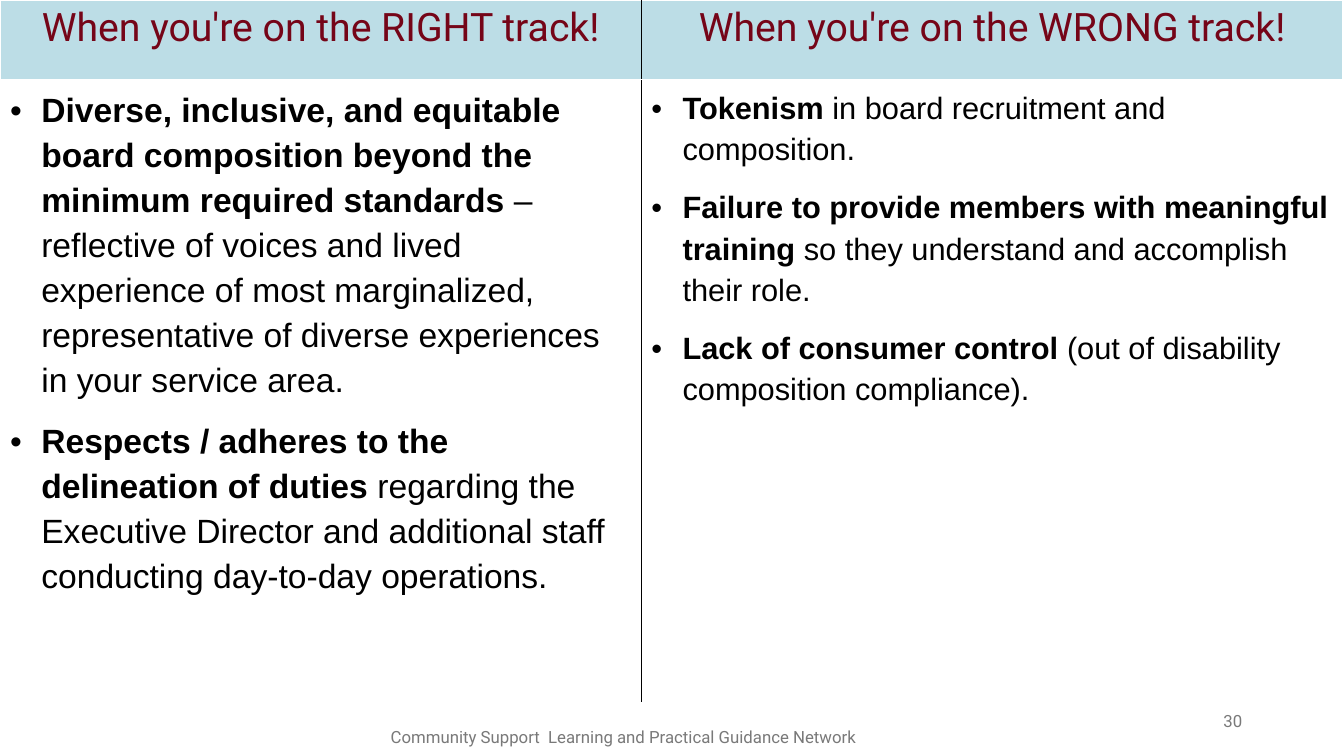
from lxml import etree
from pptx import Presentation
from pptx.dml.color import RGBColor
from pptx.enum import text
from pptx.oxml import ns
from pptx.util import Inches, Pt

HEADERS = ["When you're on the RIGHT track!", "When you're on the WRONG track!"]
RIGHT_TRACK = [
    ("Diverse, inclusive, and equitable board composition beyond the minimum required standards",
     " – reflective of voices and lived experience of most marginalized, representative of "
     "diverse experiences in your service area."),
    ("Respects / adheres to the delineation of duties",
     " regarding the Executive Director and additional staff conducting day-to-day operations."),
]
WRONG_TRACK = [
    ("Tokenism", " in board recruitment and composition."),
    ("Failure to provide members with meaningful training",
     " so they understand and accomplish their role."),
    ("Lack of consumer control", " (out of disability composition compliance)."),
]


def color(value):
    return RGBColor.from_string(value)


class TrackSlide:
    """Holds the style and the slide that elements are added to."""
    heading_font, body_font = "Roboto", "Arial"
    black, white, gray, maroon, blue = "000000", "FFFFFF", "797979", "750518", "BCDDE6"
    indent = Inches(0.31)

    def __init__(self, presentation):
        self.slide = presentation.slides.add_slide(presentation.slide_layouts[6])

    def set_font(self, font, name, size, value):
        font.name, font.size = name, Pt(size)
        font.color.rgb = color(value)

    def add_label(self, label, left, top, width, height, align):
        shape = self.slide.shapes.add_textbox(*map(Inches, (left, top, width, height)))
        frame = shape.text_frame
        frame.word_wrap = True
        frame.vertical_anchor = text.MSO_ANCHOR.MIDDLE
        paragraph = frame.paragraphs[0]
        paragraph.text, paragraph.alignment = label, align
        self.set_font(paragraph.font, self.heading_font, 12, self.gray)

    def add_table(self, widths, heights):
        table = self.slide.shapes.add_table(
            len(heights), len(widths), 0, 0, Inches(sum(widths)), Inches(sum(heights))).table
        table.first_row = table.horz_banding = False
        for column, width in zip(table.columns, widths):
            column.width = Inches(width)
        for row, height in zip(table.rows, heights):
            row.height = Inches(height)
        return table

    def set_borders(self, cell, **borders):
        """Draw borders given as side=(colour, points), in the order L, R, T, B."""
        properties = cell._tc.get_or_add_tcPr()
        for position, (side, (value, points)) in enumerate(borders.items()):
            line = etree.Element(ns.qn(f"a:ln{side}"), w=str(Pt(points)))
            fill = etree.SubElement(line, ns.qn("a:solidFill"))
            etree.SubElement(fill, ns.qn("a:srgbClr"), val=value)
            properties.insert(position, line)

    def fill_header(self, cell, heading):
        cell.fill.solid()
        cell.fill.fore_color.rgb = color(self.blue)
        paragraph = cell.text_frame.paragraphs[0]
        paragraph.text = heading
        paragraph.alignment = text.PP_ALIGN.CENTER
        self.set_font(paragraph.font, self.heading_font, 28, self.maroon)

    def fill_bullets(self, cell, points, size):
        cell.fill.background()
        frame = cell.text_frame
        for index, parts in enumerate(points):
            paragraph = frame.add_paragraph() if index else frame.paragraphs[0]
            paragraph.line_spacing, paragraph.space_after = 1.2, Pt(12)
            self.set_font(paragraph.font, self.body_font, size, self.black)
            for part, bold in zip(parts, (True, False)):
                run = paragraph.add_run()
                run.text, run.font.bold = part, bold
            properties = paragraph._p.get_or_add_pPr()
            properties.set("marL", str(self.indent))
            properties.set("indent", str(-self.indent))
            defaults = properties.find(ns.qn("a:defRPr"))
            defaults.addprevious(etree.Element(ns.qn("a:buFont"), typeface=self.body_font))
            defaults.addprevious(etree.Element(ns.qn("a:buChar"), char="•"))


def main():
    presentation = Presentation()
    presentation.slide_width, presentation.slide_height = Inches(13.33), Inches(7.5)
    track = TrackSlide(presentation)
    track.add_label("30", 9.42, 6.95, 3, 0.4, text.PP_ALIGN.RIGHT)

    table = track.add_table([6.36, 6.96], [0.79, 6.18])
    edge, divider = (track.white, 1), (track.black, 1)
    columns = zip(HEADERS, (RIGHT_TRACK, WRONG_TRACK), (24, 22),
                  ((edge, divider), (divider, edge)))
    for column, (heading, points, size, (left, right)) in enumerate(columns):
        header, body = table.cell(0, column), table.cell(1, column)
        track.fill_header(header, heading)
        track.fill_bullets(body, points, size)
        for cell in (header, body):
            track.set_borders(cell, L=left, R=right, T=edge, B=edge)

    track.add_label("Community Support  Learning and Practical Guidance Network",
                    3.69, 7.1, 4.99, 0.41, text.PP_ALIGN.CENTER)
    presentation.save("out.pptx")


if __name__ == "__main__":
    main()
